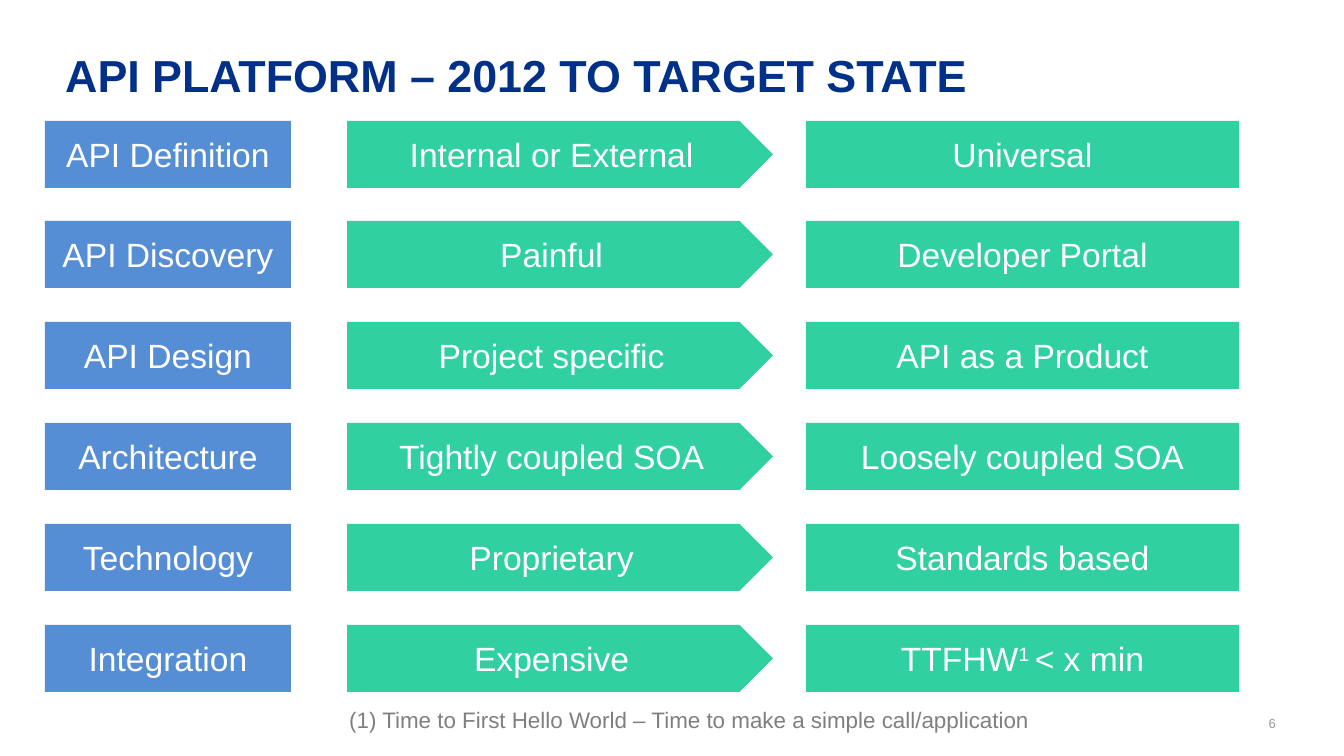
import pptx
import pptx.util
import pptx.dml.color
import pptx.enum.shapes
import pptx.enum.text

PX = 914400 / 134.4
ALIGN = pptx.enum.text.PP_ALIGN
ANCHOR = pptx.enum.text.MSO_ANCHOR
KIND = pptx.enum.shapes.MSO_SHAPE


def color(code):
    return pptx.dml.color.RGBColor.from_string(code)


def style(para, size, code, bold=False):
    for run in para.runs:
        run.font.name = "Arial"
        run.font.size = pptx.util.Pt(size)
        run.font.bold = bold
        run.font.color.rgb = color(code)


deck = pptx.Presentation()
deck.slide_width = round(1344 * PX)
deck.slide_height = round(756 * PX)
slide = deck.slides.add_slide(deck.slide_layouts[6])

notes = [
    ("API PLATFORM – 2012 TO TARGET STATE", (52, 36, 1210, 66), 24, "003087"),
    ("6", (1239, 703, 50, 40), 7, "99999A"),
    ("(1) Time to First Hello World – Time to make a simple call/application",
     (336, 692, 714, 47), 12, "7F7F7F"),
]
frames = []
for text, area, size, code in notes:
    box = slide.shapes.add_textbox(*[round(n * PX) for n in area])
    frame = box.text_frame
    frame.word_wrap = True
    frame.text = text
    style(frame.paragraphs[0], size, code, size == 24)
    frames.append(frame)

title, page, foot = frames
title.margin_top = round(12 * PX)
page.vertical_anchor = ANCHOR.MIDDLE
page.paragraphs[0].alignment = ALIGN.RIGHT
foot.word_wrap = False
foot.paragraphs[0].line_spacing = 1.3

cols = [
    (45, 246, KIND.RECTANGLE, "558ED5"),
    (347, 426, KIND.PENTAGON, "31D0A1"),
    (806, 433, KIND.RECTANGLE, "31D0A1"),
]
rows = [
    ("API Definition", "Internal or External", "Universal"),
    ("API Discovery", "Painful", "Developer Portal"),
    ("API Design", "Project specific", "API as a Product"),
    ("Architecture", "Tightly coupled SOA", "Loosely coupled SOA"),
    ("Technology", "Proprietary", "Standards based"),
    ("Integration", "Expensive", "TTFHW|1 |< x min"),
]
for i, row in enumerate(rows):
    top = 121 + i * 504 // 5
    for text, (left, width, kind, fill) in zip(row, cols):
        area = [round(n * PX) for n in (left, top, width, 67)]
        shape = slide.shapes.add_shape(kind, *area)
        shape.shadow.inherit = False
        shape.fill.solid()
        shape.fill.fore_color.rgb = color(fill)
        shape.line.fill.background()
        frame = shape.text_frame
        frame.word_wrap = True
        frame.vertical_anchor = ANCHOR.MIDDLE
        para = frame.paragraphs[0]
        para.alignment = ALIGN.CENTER
        for j, part in enumerate(text.split("|")):
            run = para.add_run()
            run.text = part
            if j == 1:
                run._r.get_or_add_rPr().set("baseline", "30000")
        style(para, 18, "FFFFFF")

deck.save("out.pptx")
